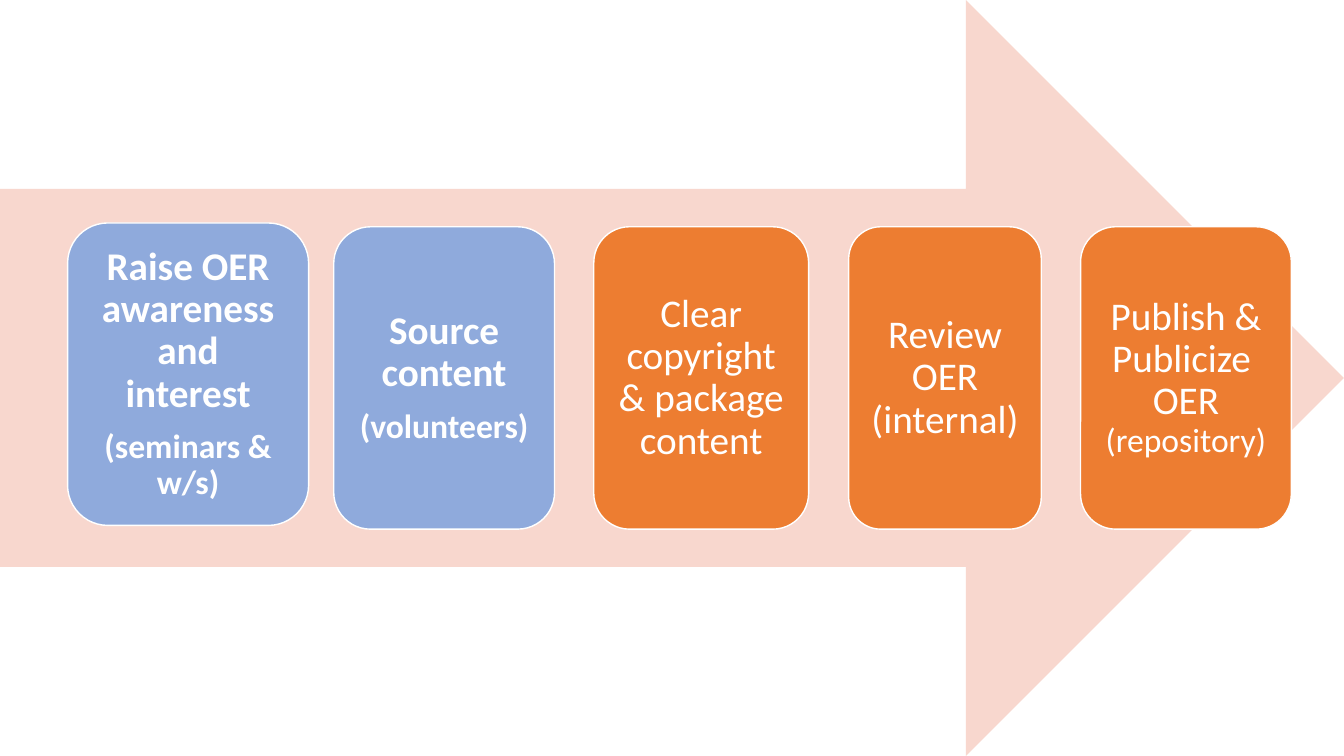
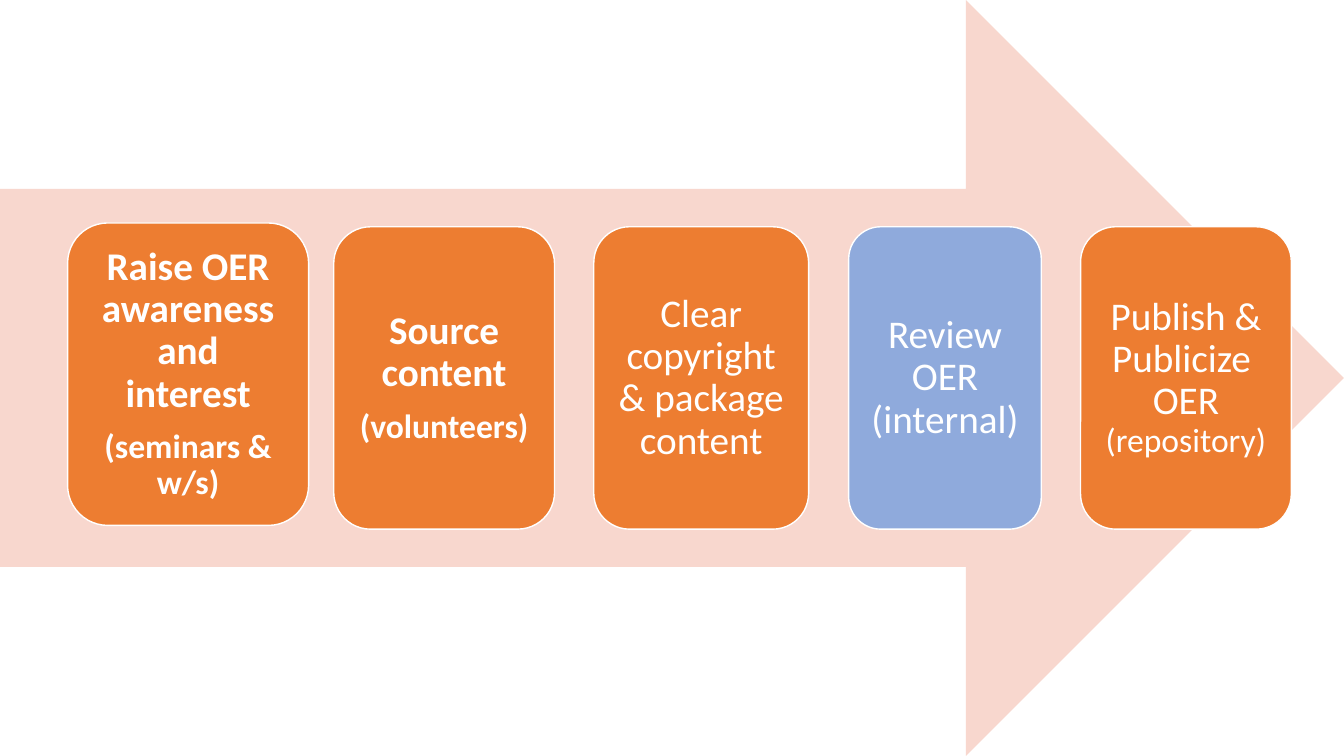
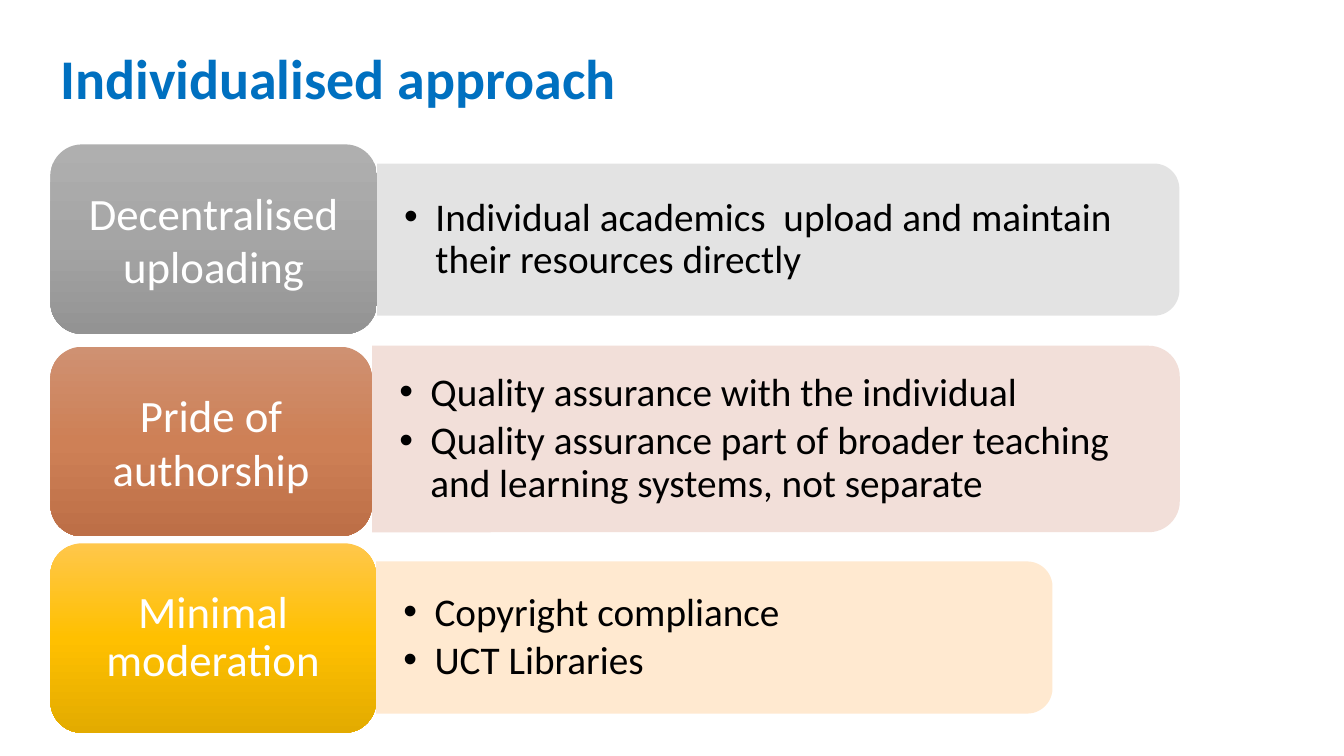
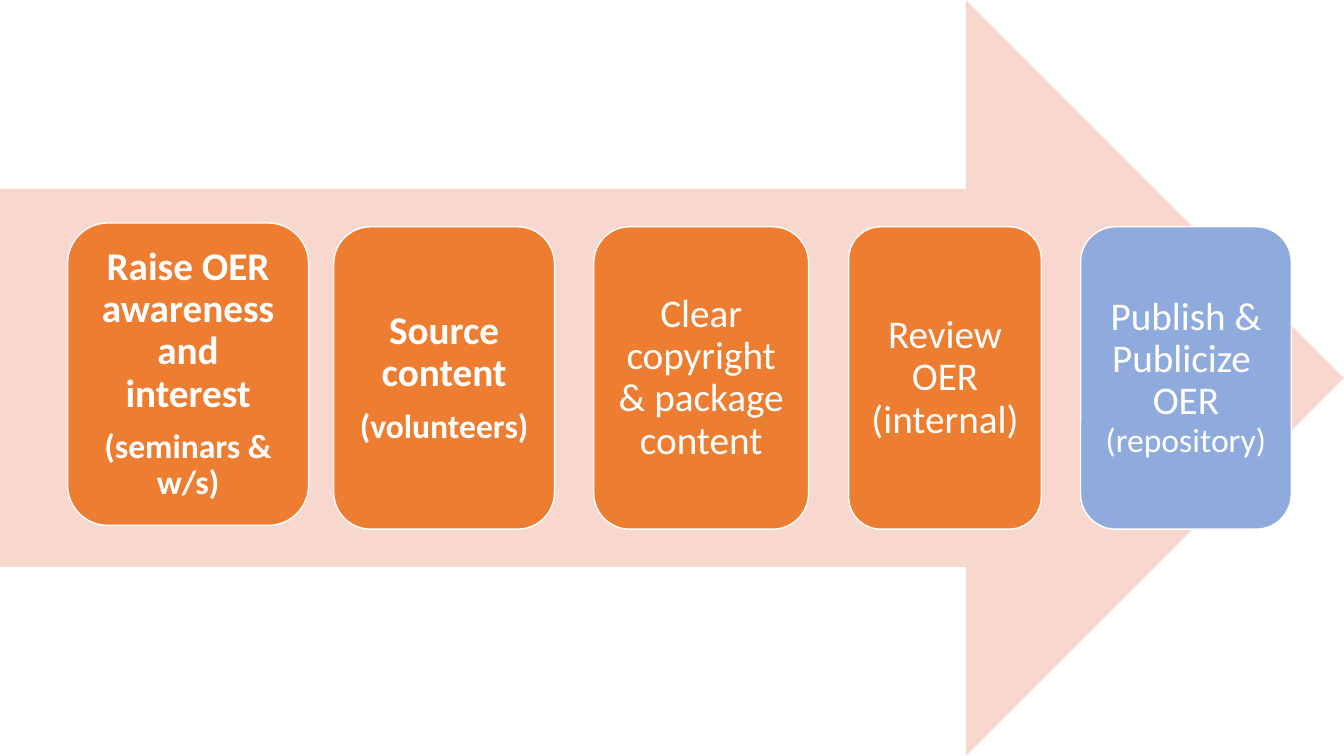
from copy import deepcopy
from dataclasses import dataclass

from pptx import Presentation
from pptx.dml.color import RGBColor
from pptx.enum.shapes import MSO_SHAPE
from pptx.enum.text import MSO_ANCHOR, MSO_AUTO_SIZE, PP_ALIGN
from pptx.oxml.ns import qn
from pptx.shapes.autoshape import Shape
from pptx.slide import Slide
from pptx.text.text import TextFrame
from pptx.util import Inches, Length, Pt

RIGHT_ARROW = MSO_SHAPE.RIGHT_ARROW
ROUNDED = MSO_SHAPE.ROUNDED_RECTANGLE
ROUNDED_TOP = MSO_SHAPE.ROUND_2_SAME_RECTANGLE
MIDDLE = MSO_ANCHOR.MIDDLE
NO_AUTOFIT = MSO_AUTO_SIZE.NONE
LEFT, CENTER = PP_ALIGN.LEFT, PP_ALIGN.CENTER

SLIDE_WIDTH, SLIDE_HEIGHT = Inches(13.33), Inches(7.5)
COMPARISON_LAYOUT, BLANK_LAYOUT = 4, 6


@dataclass(frozen=True)
class Theme:
    font: str = "Calibri"
    title_size: float = 40
    label_size: float = 32
    text_size: float = 28
    note_size: float = 24
    tight: float = 0.9
    step_gap: float = 9.8
    bullet_gap: float = 4.2
    bullet_indent: float = 0.31
    panel_opacity: int = 90
    title: str = "0070C0"
    black: str = "000000"
    white: str = "FFFFFF"
    arrow: str = "F8D7CE"
    step: str = "ED7D31"
    active_step: str = "8FAADC"


THEME = Theme()


@dataclass(frozen=True)
class Box:
    """A rectangle in percent of the slide's width and height."""
    left: float
    top: float
    width: float
    height: float

    def lengths(self) -> tuple[Length, Length, Length, Length]:
        return (across(self.left), down(self.top),
                across(self.width), down(self.height))


@dataclass(frozen=True)
class Words:
    text: str
    size: float = THEME.text_size
    bold: bool = False
    color: str = THEME.white


@dataclass(frozen=True)
class Step:
    left: float
    width: float
    paragraphs: list[list[Words]]
    top: float = 30


@dataclass(frozen=True)
class Approach:
    label: str
    label_top: float
    label_width: float
    label_spacing: float
    gradient: tuple[str, str, str]
    panel_center: float
    panel_width: float
    panel_height: float
    panel_color: str
    points: list[str]


STEPS = [
    Step(5.03, 17.93, [[Words("Raise OER awareness and interest", bold=True)],
                       [Words("(seminars & w/s)", THEME.note_size, True)]], top=29.5),
    Step(24.83, 16.43, [[Words("Source content", bold=True)],
                        [Words("(volunteers)", THEME.note_size, True)]]),
    Step(44.18, 15.98, [[Words("Clear copyright & package content")]]),
    Step(63.15, 14.33, [[Words("Review OER (internal)")]]),
    Step(80.4, 15.68, [[Words("Publish & Publicize  OER "),
                        Words("(repository)", THEME.note_size)]]),
]
STEP_HEIGHT = 40

APPROACHES = [
    Approach("Decentralised uploading", 19.1, 24.3, 1.0,
             ("AFAFAF", "A5A5A5", "939393"), 31.7, 59.7, 20.13, "E1E1E1",
             ["Individual academics  upload and maintain their resources directly"]),
    Approach("Pride of authorship", 45.87, 23.93, 1.0,
             ("CF9172", "CE8056", "BD6F47"), 58.07, 60.1, 24.67, "F1DCD5",
             ["Quality assurance with the individual",
              "Quality assurance part of broader teaching and learning systems, "
              "not separate"]),
    Approach("Minimal moderation", 71.87, 24.23, 0.9,
             ("FFC74B", "FFC000", "E3AB00"), 84.33, 50.33, 20.13, "FFE7CB",
             ["Copyright compliance", "UCT Libraries"]),
]
LABEL_LEFT, LABEL_HEIGHT = 3.75, 25.07
TITLE_BOX = Box(LABEL_LEFT, 2.4, 68.4, 16.67)


def across(percent: float) -> Length:
    return Length(round(SLIDE_WIDTH * percent / 100))


def down(percent: float) -> Length:
    return Length(round(SLIDE_HEIGHT * percent / 100))


def color_of(value: str) -> RGBColor:
    return RGBColor.from_string(value)


def write(frame: TextFrame, paragraphs: list[list[Words]], margins: tuple[float, float],
          alignment: PP_ALIGN = CENTER, spacing: float = THEME.tight,
          gap: float = 0, bulleted: bool = False) -> None:
    """Fill a text frame run by run; margins are horizontal and vertical inches."""
    frame.word_wrap = True
    frame.auto_size = NO_AUTOFIT
    frame.vertical_anchor = MIDDLE
    frame.margin_left = frame.margin_right = Inches(margins[0])
    frame.margin_top = frame.margin_bottom = Inches(margins[1])
    for index, pieces in enumerate(paragraphs):
        paragraph = frame.add_paragraph() if index else frame.paragraphs[0]
        paragraph.alignment = alignment
        paragraph.line_spacing = spacing
        paragraph.space_before, paragraph.space_after = Pt(0), Pt(gap)
        if bulleted:
            properties = paragraph._p.get_or_add_pPr()
            indent = Inches(THEME.bullet_indent)
            properties.set("marL", str(indent))
            properties.set("indent", str(-indent))
            bullet_font = properties.makeelement(qn("a:buFont"), {"typeface": "Arial"})
            bullet = properties.makeelement(qn("a:buChar"), {"char": "•"})
            properties.extend([bullet_font, bullet])
        for words in pieces:
            run = paragraph.add_run()
            run.text = words.text
            run.font.name = THEME.font
            run.font.size = Pt(words.size)
            run.font.bold = words.bold
            run.font.color.rgb = color_of(words.color)


def add_box(slide: Slide, kind: MSO_SHAPE, box: Box, fill: str = "") -> Shape:
    """Add a preset shape without shadow or outline."""
    shape = slide.shapes.add_shape(kind, *box.lengths())
    shape.shadow.inherit = False
    shape.line.fill.background()
    if fill:
        shape.fill.solid()
        shape.fill.fore_color.rgb = color_of(fill)
    return shape


def fill_gradient(shape: Shape, colors: tuple[str, ...]) -> None:
    """Blend evenly spaced colours from top to bottom."""
    shape.fill.gradient()
    shape.fill.gradient_angle = 270
    stop_list = shape._element.spPr.find(".//" + qn("a:gsLst"))
    while len(stop_list) < len(colors):
        stop_list.append(deepcopy(stop_list[0]))
    for index, (stop, color) in enumerate(zip(shape.fill.gradient_stops, colors)):
        stop.position = index / (len(colors) - 1)
        stop.color.rgb = color_of(color)


def add_process_slide(presentation: Presentation, active: set[int]) -> None:
    """Draw the workflow arrow with the active steps highlighted."""
    slide = presentation.slides.add_slide(presentation.slide_layouts[BLANK_LAYOUT])
    add_box(slide, RIGHT_ARROW, Box(0, 0, 100, 100), THEME.arrow)
    for index, step in enumerate(STEPS):
        shape = add_box(slide, ROUNDED, Box(step.left, step.top, step.width, STEP_HEIGHT),
                        THEME.active_step if index in active else THEME.step)
        shape.line.color.rgb = color_of(THEME.white)
        shape.line.width = Pt(1)
        write(shape.text_frame, step.paragraphs, (0.12, 0.12), gap=THEME.step_gap)


def add_panel(slide: Slide, approach: Approach) -> Box:
    """Draw a panel rounded on its right side and return its visible box."""
    box = Box(LABEL_LEFT + approach.label_width,
              approach.panel_center - approach.panel_height / 2,
              approach.panel_width, approach.panel_height)
    panel = add_box(slide, ROUNDED_TOP, box, approach.panel_color)
    # A quarter turn swaps the sides around a fixed centre
    left, top, width, height = box.lengths()
    panel.left, panel.top = left + (width - height) // 2, top + (height - width) // 2
    panel.width, panel.height = height, width
    panel.rotation = 90
    color = panel._element.spPr.find(qn("a:solidFill"))[0]
    color.append(color.makeelement(qn("a:alpha"),
                                   {"val": str(THEME.panel_opacity * 1000)}))
    return box


def add_approach_slide(presentation: Presentation) -> None:
    """Draw the title and one labelled panel with a list per approach."""
    slide = presentation.slides.add_slide(presentation.slide_layouts[COMPARISON_LAYOUT])
    title, *bodies = slide.placeholders
    title.left, title.top, title.width, title.height = TITLE_BOX.lengths()
    write(title.text_frame,
          [[Words("Individualised approach", THEME.title_size, True, THEME.title)]],
          (0.1, 0.05), LEFT)
    for approach, body in zip(APPROACHES, bodies):
        box = add_panel(slide, approach)
        # List, lifted above its panel
        body.left, body.top, body.width, body.height = box.lengths()
        slide.shapes._spTree.append(body._element)
        write(body.text_frame,
              [[Words(point, color=THEME.black)] for point in approach.points],
              (0.27, 0.2), LEFT, gap=THEME.bullet_gap, bulleted=True)
        # Label
        label = add_box(slide, ROUNDED, Box(LABEL_LEFT, approach.label_top,
                                            approach.label_width, LABEL_HEIGHT))
        fill_gradient(label, approach.gradient)
        write(label.text_frame, [[Words(approach.label, THEME.label_size)]],
              (0.13, 0.07), spacing=approach.label_spacing)
    for unused in bodies[len(APPROACHES):]:
        unused._element.getparent().remove(unused._element)


def main() -> None:
    presentation = Presentation()
    presentation.slide_width, presentation.slide_height = SLIDE_WIDTH, SLIDE_HEIGHT
    add_process_slide(presentation, {0, 1})
    add_process_slide(presentation, {3})
    add_approach_slide(presentation)
    add_process_slide(presentation, {4})
    presentation.save("out.pptx")


if __name__ == "__main__":
    main()
